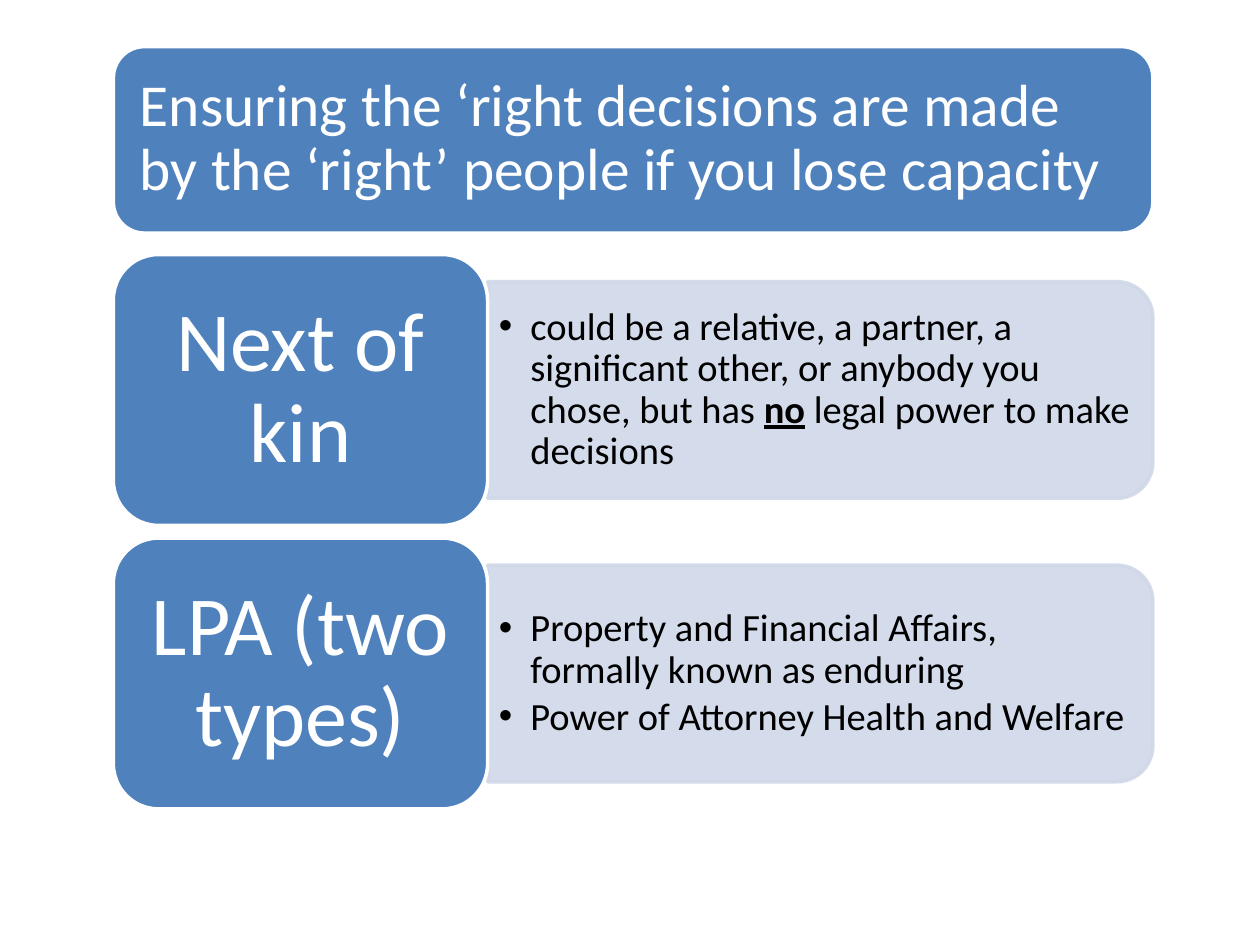
from lxml import etree
from pptx import Presentation
from pptx.dml.color import RGBColor
from pptx.enum import shapes, text
from pptx.oxml.ns import qn
from pptx.util import Inches, Pt

BLUE = RGBColor(0x4F, 0x81, 0xBD)
PALE = RGBColor(0xD0, 0xD8, 0xE8)
WHITE = RGBColor(255, 255, 255)
BLACK = RGBColor(0, 0, 0)

LEFT = 0.9
LABEL_W, LABEL_H = 2.97, 2.15
PANEL_W, PANEL_H = 5.28, 1.72
FIRST_TOP, ROW_STEP = 2.02, 2.25

ROWS = [
    ("Next of kin", [
        [("could be a relative, a partner, a significant other, "
          "or anybody you chose, but has ", False),
         ("no", True),
         (" legal power to make decisions", False)],
    ]),
    ("LPA (two types)", [
        [("Property and Financial Affairs, formally known as enduring", False)],
        [("Power of Attorney Health and Welfare", False)],
    ]),
]


def add_box(s, kind, x, y, w, h, fill, line):
    sp = s.shapes.add_shape(kind, Inches(x), Inches(y), Inches(w), Inches(h))
    sp.shadow.inherit = False
    sp.fill.solid()
    sp.fill.fore_color.rgb = fill
    sp.line.color.rgb = line
    sp.line.width = Pt(2)
    return sp


def set_frame(tf, inset_x, inset_y):
    tf.word_wrap = True
    tf.auto_size = text.MSO_AUTO_SIZE.NONE
    tf.vertical_anchor = text.MSO_ANCHOR.MIDDLE
    tf.margin_left = tf.margin_right = Inches(inset_x)
    tf.margin_top = tf.margin_bottom = Inches(inset_y)


def add_run(p, words, size, color, strong=False):
    r = p.add_run()
    r.text = words
    r.font.name = "Calibri"
    r.font.size = Pt(size)
    r.font.color.rgb = color
    r.font.bold = strong
    r.font.underline = strong


def add_title(s, words):
    add_box(s, shapes.MSO_SHAPE.ROUNDED_RECTANGLE,
            LEFT, 0.37, 8.25, 1.48, BLUE, WHITE)
    sp = s.shapes.title
    s.shapes._spTree.append(sp._element)
    sp.left, sp.top = Inches(0.97), Inches(0.44)
    sp.width, sp.height = Inches(8.11), Inches(1.33)
    set_frame(sp.text_frame, 0.14, 0.14)
    p = sp.text_frame.paragraphs[0]
    p.alignment = text.PP_ALIGN.LEFT
    p.line_spacing = 0.9
    add_run(p, words, 34, WHITE)


def add_panel(s, y):
    center_x = LEFT + LABEL_W + PANEL_W / 2
    center_y = y + LABEL_H / 2
    sp = add_box(s, shapes.MSO_SHAPE.ROUND_2_SAME_RECTANGLE,
                 center_x - PANEL_H / 2, center_y - PANEL_W / 2,
                 PANEL_H, PANEL_W, PALE, PALE)
    sp.rotation = 90
    for color in sp._element.spPr.iter(qn("a:srgbClr")):
        etree.SubElement(color, qn("a:alpha"), val="90000")


def add_bullets(s, y, items):
    sp = s.shapes.add_textbox(Inches(LEFT + LABEL_W), Inches(y + 0.3),
                              Inches(5.2), Inches(1.55))
    tf = sp.text_frame
    set_frame(tf, 0.09, 0.05)
    for i, runs in enumerate(items):
        p = tf.add_paragraph() if i else tf.paragraphs[0]
        p.level = 1
        p.line_spacing = 0.9
        p.space_after = Pt(3.3)
        pPr = p._p.get_or_add_pPr()
        pPr.set("marL", str(Inches(0.25)))
        pPr.set("indent", str(Inches(-0.25)))
        etree.SubElement(pPr, qn("a:buFont"), typeface="Arial")
        etree.SubElement(pPr, qn("a:buChar"), char="•")
        for words, strong in runs:
            add_run(p, words, 22, BLACK, strong)


def add_label(s, y, words):
    sp = add_box(s, shapes.MSO_SHAPE.ROUNDED_RECTANGLE,
                 LEFT, y, LABEL_W, LABEL_H, BLUE, WHITE)
    set_frame(sp.text_frame, 0.2, 0.1)
    p = sp.text_frame.paragraphs[0]
    p.alignment = text.PP_ALIGN.CENTER
    p.line_spacing = 0.9
    add_run(p, words, 48, WHITE)


def main():
    prs = Presentation()
    prs.slide_width, prs.slide_height = Inches(10), Inches(7.5)
    s = prs.slides.add_slide(prs.slide_layouts[5])
    add_title(s, "Ensuring the ‘right decisions are made by the ‘right’ "
                 "people if you lose capacity")
    for i, (label, items) in enumerate(ROWS):
        y = FIRST_TOP + i * ROW_STEP
        add_panel(s, y)
        add_bullets(s, y, items)
        add_label(s, y, label)
    prs.save("out.pptx")


if __name__ == "__main__":
    main()
